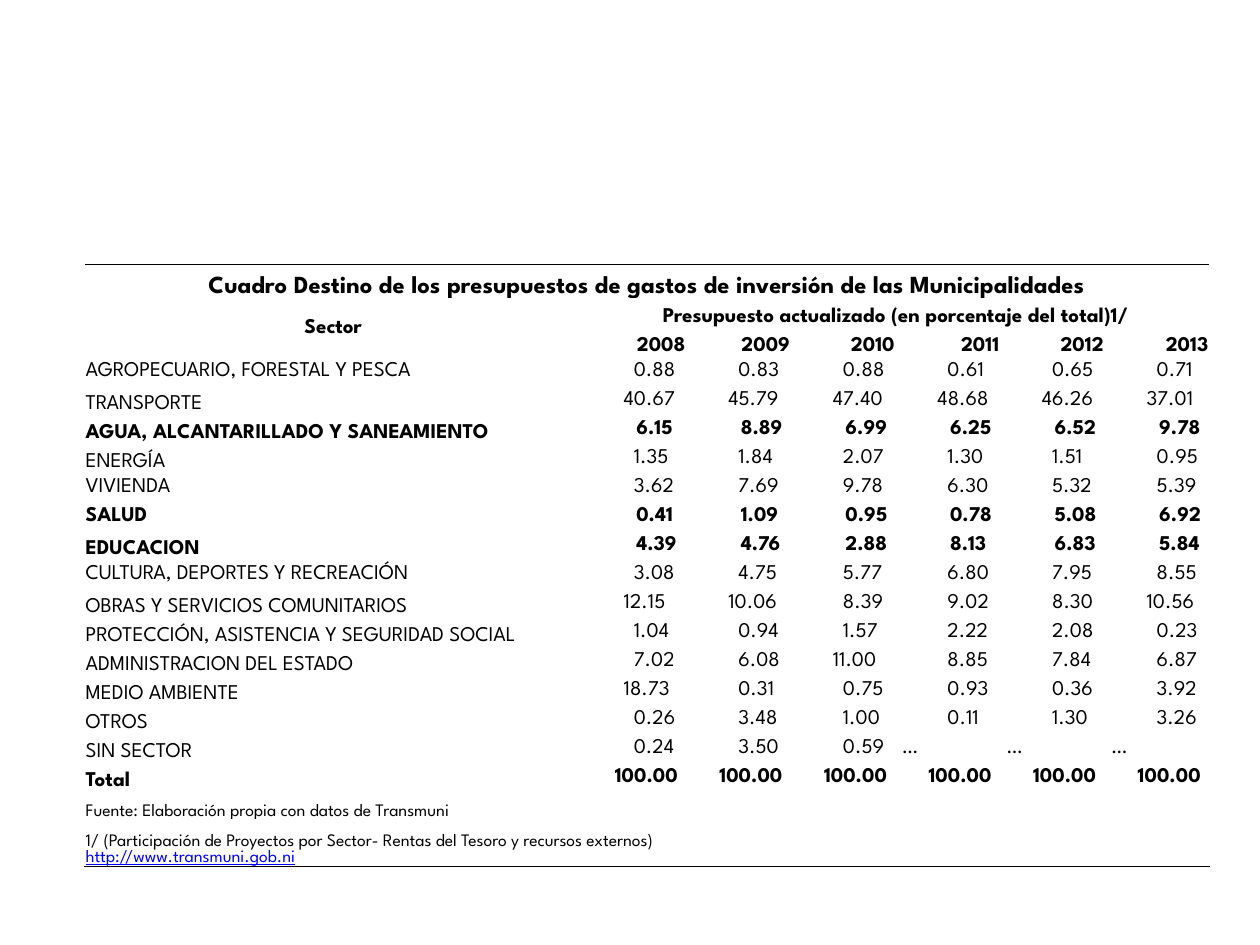
from typing import NamedTuple

import lxml.etree
import pptx
import pptx.dml.color
import pptx.enum.text
import pptx.oxml.ns
import pptx.table
import pptx.util
from pptx.util import Inches

ALIGN = pptx.enum.text.PP_ALIGN
ANCHOR = pptx.enum.text.MSO_ANCHOR
FONT = "League Spartan"
COLORS = {"text": "000000", "rule": "000000", "link": "0000FF"}
YEARS = range(2008, 2014)
MARGIN = 0.01
# Left margin of a figure, by number of characters, so that decimals line up
REGULAR_INDENTS = {1: 0.05, 4: 0.41, 5: 0.33}
BOLD_INDENTS = {4: 0.43, 6: 0.26}


class Sector(NamedTuple):
    name: str
    shares: str
    bold: bool = False
    anchor: ANCHOR = ANCHOR.BOTTOM


SECTORS = [
    Sector("AGROPECUARIO, FORESTAL Y PESCA", "0.88 0.83 0.88 0.61 0.65 0.71", anchor=ANCHOR.MIDDLE),
    Sector("TRANSPORTE", "40.67 45.79 47.40 48.68 46.26 37.01"),
    Sector("AGUA, ALCANTARILLADO Y SANEAMIENTO", "6.15 8.89 6.99 6.25 6.52 9.78", bold=True),
    Sector("ENERGÍA", "1.35 1.84 2.07 1.30 1.51 0.95"),
    Sector("VIVIENDA", "3.62 7.69 9.78 6.30 5.32 5.39", anchor=ANCHOR.MIDDLE),
    Sector("SALUD", "0.41 1.09 0.95 0.78 5.08 6.92", bold=True, anchor=ANCHOR.MIDDLE),
    Sector("EDUCACION", "4.39 4.76 2.88 8.13 6.83 5.84", bold=True),
    Sector("CULTURA, DEPORTES Y RECREACIÓN", "3.08 4.75 5.77 6.80 7.95 8.55", anchor=ANCHOR.MIDDLE),
    Sector("OBRAS Y SERVICIOS COMUNITARIOS", "12.15 10.06 8.39 9.02 8.30 10.56"),
    Sector("PROTECCIÓN, ASISTENCIA Y SEGURIDAD SOCIAL", "1.04 0.94 1.57 2.22 2.08 0.23"),
    Sector("ADMINISTRACION DEL ESTADO", "7.02 6.08 11.00 8.85 7.84 6.87"),
    Sector("MEDIO AMBIENTE", "18.73 0.31 0.75 0.93 0.36 3.92"),
    Sector("OTROS", "0.26 3.48 1.00 0.11 1.30 3.26"),
    Sector("SIN SECTOR", "0.24 3.50 0.59 … … …"),
    Sector("Total", "100.00 100.00 100.00 100.00 100.00 100.00", bold=True),
]
FIRST_SECTOR_ROW = 3
SOURCE_ROW = FIRST_SECTOR_ROW + len(SECTORS)
NOTE_ROW = SOURCE_ROW + 1


def write(cell: pptx.table._Cell, text: str = "", size: float = 12, bold: bool = False,
          align: ALIGN = ALIGN.LEFT, anchor: ANCHOR = ANCHOR.BOTTOM,
          indent: float = MARGIN) -> None:
    cell.text = text
    cell.fill.background()
    cell.vertical_anchor = anchor
    cell.margin_left = Inches(indent)
    cell.margin_top = cell.margin_right = Inches(MARGIN)
    cell.margin_bottom = 0
    for paragraph in cell.text_frame.paragraphs:
        paragraph.alignment = align
        paragraph.font.name = FONT
        paragraph.font.size = pptx.util.Pt(size)
        paragraph.font.bold = bold
        paragraph.font.color.rgb = pptx.dml.color.RGBColor.from_string(COLORS["text"])


def rule(cell: pptx.table._Cell, side: str) -> None:
    """Draw a 1 pt border; side is the border tag, lnT or lnB."""
    qn = pptx.oxml.ns.qn
    border = lxml.etree.Element(qn(f"a:{side}"), w=str(pptx.util.Pt(1)))
    fill = lxml.etree.SubElement(border, qn("a:solidFill"))
    lxml.etree.SubElement(fill, qn("a:srgbClr"), val=COLORS["rule"])
    cell._tc.get_or_add_tcPr().insert(0, border)


def write_headings(table: pptx.table.Table) -> None:
    last = len(YEARS)
    table.cell(0, 0).merge(table.cell(0, last))
    write(table.cell(0, 0),
          "Cuadro Destino de los presupuestos de gastos de inversión de las Municipalidades",
          size=14, bold=True, align=ALIGN.CENTER)
    table.cell(1, 0).merge(table.cell(2, 0))
    write(table.cell(1, 0), "Sector", bold=True, align=ALIGN.CENTER, anchor=ANCHOR.MIDDLE)
    table.cell(1, 1).merge(table.cell(1, last))
    write(table.cell(1, 1), "Presupuesto actualizado (en porcentaje del total)1/",
          bold=True, align=ALIGN.CENTER)
    for column, year in enumerate(YEARS, 1):
        write(table.cell(2, column), str(year), bold=True, align=ALIGN.RIGHT)


def write_sector(table: pptx.table.Table, row: int, sector: Sector) -> None:
    write(table.cell(row, 0), sector.name, bold=sector.bold, anchor=sector.anchor)
    indents = BOLD_INDENTS if sector.bold else REGULAR_INDENTS
    for column, share in enumerate(sector.shares.split(), 1):
        write(table.cell(row, column), share, bold=sector.bold,
              anchor=ANCHOR.MIDDLE, indent=indents[len(share)])


def write_notes(table: pptx.table.Table) -> None:
    notes = {
        SOURCE_ROW: "Fuente: Elaboración propia con datos de Transmuni",
        NOTE_ROW: "1/ (Participación de Proyectos por Sector- Rentas del Tesoro y recursos externos)\n"
                  "http://www.transmuni.gob.ni",
    }
    for row, note in notes.items():
        table.cell(row, 0).merge(table.cell(row, len(YEARS)))
        write(table.cell(row, 0), note, size=10)
    address = table.cell(NOTE_ROW, 0).text_frame.paragraphs[1]
    address.font.underline = True
    address.font.color.rgb = pptx.dml.color.RGBColor.from_string(COLORS["link"])


def main() -> None:
    presentation = pptx.Presentation()
    presentation.slide_width = Inches(10)
    presentation.slide_height = Inches(7.5)
    slide = presentation.slides.add_slide(presentation.slide_layouts[6])
    table = slide.shapes.add_table(NOTE_ROW + 1, len(YEARS) + 1, Inches(0.67), Inches(2.1),
                                   Inches(8.93), Inches(4.78)).table
    table.first_row = table.horz_banding = False
    for column in table.columns:
        column.width = Inches(0.83)
    table.columns[0].width = Inches(3.95)
    for row in table.rows:
        row.height = Inches(0.23)
    table.rows[0].height = Inches(0.27)
    table.rows[NOTE_ROW].height = Inches(0.37)

    for cell in table.iter_cells():
        write(cell)
    write_headings(table)
    for row, sector in enumerate(SECTORS, FIRST_SECTOR_ROW):
        write_sector(table, row, sector)
    write_notes(table)
    for column in range(len(table.columns)):
        rule(table.cell(0, column), "lnT")
        rule(table.cell(NOTE_ROW, column), "lnB")
    presentation.save("out.pptx")


if __name__ == "__main__":
    main()
